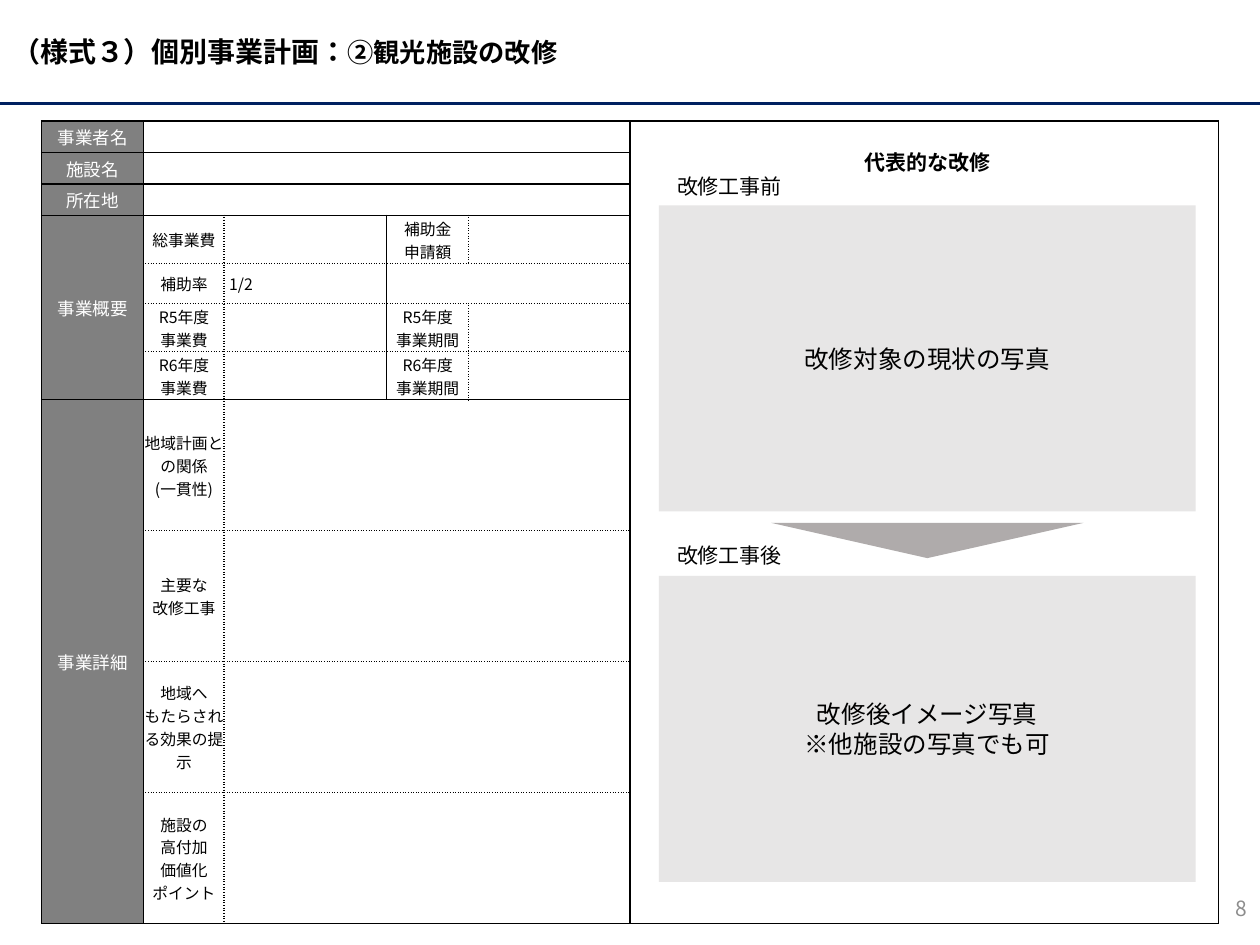
import pptx
import pptx.util
import pptx.dml.color
import pptx.enum.lang
import pptx.enum.shapes
import pptx.enum.text
import pptx.oxml
import pptx.oxml.ns

Inches = pptx.util.Inches
Pt = pptx.util.Pt
RGB = pptx.dml.color.RGBColor.from_string
Shape = pptx.enum.shapes.MSO_SHAPE
Align = pptx.enum.text.PP_ALIGN
qn = pptx.oxml.ns.qn

theme = {
    "font": "Noto Sans CJK JP",
    "black": "000000", "white": "FFFFFF", "navy": "002060",
    "head": "808080", "panel": "E7E6E6", "arrow": "AFABAB", "page": "8C8C8C",
    "title": 16, "topic": 15, "photo": 14, "label": 12, "group": 10, "cell": 9,
}


def write(frame, text, size="label", color="black", bold=False,
          align=Align.CENTER, join=False):
    frame.word_wrap = True
    frame.vertical_anchor = pptx.enum.text.MSO_ANCHOR.MIDDLE
    for i, line in enumerate(text.split("\n")):
        para = frame.paragraphs[-1] if join or i == 0 else frame.add_paragraph()
        para.alignment = align
        run = para.add_run()
        run.text = line
        run.font.size = Pt(theme[size])
        run.font.bold = bold
        run.font.name = theme["font"]
        run.font.language_id = pptx.enum.lang.MSO_LANGUAGE_ID.JAPANESE
        run.font.color.rgb = RGB(theme[color])
        east = pptx.oxml.parse_xml(
            f'<a:ea {pptx.oxml.ns.nsdecls("a")} typeface="{theme["font"]}"/>')
        run.font._element.find(qn("a:latin")).addnext(east)


def edge(cell, side, dash):
    cell._tc.get_or_add_tcPr().append(pptx.oxml.parse_xml(
        f'<a:ln{side} {pptx.oxml.ns.nsdecls("a")} w="12700"><a:solidFill>'
        f'<a:srgbClr val="{theme["black"]}"/></a:solidFill>'
        f'<a:prstDash val="{dash}"/></a:ln{side}>'))


deck = pptx.Presentation()
deck.slide_width, deck.slide_height = Inches(10), Inches(7.5)
slide = deck.slides.add_slide(deck.slide_layouts[6])
shapes = slide.shapes

rule = shapes.add_connector(pptx.enum.shapes.MSO_CONNECTOR.STRAIGHT,
                            0, Inches(0.82), Inches(10), Inches(0.82))
rule.line.color.rgb = RGB(theme["navy"])
rule.line.width = Pt(1.5)
rule._element.spPr.append(pptx.oxml.parse_xml(
    f'<a:effectLst {pptx.oxml.ns.nsdecls("a")}/>'))

title = shapes.add_textbox(0, 0, Inches(10), Inches(0.82)).text_frame
write(title, "（様式３）個別事業計画：", size="title", bold=True, align=Align.LEFT)
write(title, "②観光施設の改修", size="topic", bold=True, align=Align.LEFT, join=True)

cols = [0.81, 0.64, 1.29, 0.65, 1.28, 4.67]
rows = [0.25] * 3 + [0.38, 0.32, 0.38, 0.38] + [1.04] * 4
grid = shapes.add_table(len(rows), len(cols), Inches(0.33), Inches(0.96),
                        Inches(sum(cols)), Inches(sum(rows))).table
grid.first_row = grid.horz_banding = False
for col, width in zip(grid.columns, cols):
    col.width = Inches(width)
for row, height in zip(grid.rows, rows):
    row.height = Inches(height)

groups = {0: "事業者名", 1: "施設名", 2: "所在地", 3: "事業概要", 7: "事業詳細"}
labels = {
    (3, 1): "総事業費", (3, 3): "補助金\n申請額",
    (4, 1): "補助率", (4, 2): "1/2",
    (5, 1): "R5年度\n事業費", (5, 3): "R5年度\n事業期間",
    (6, 1): "R6年度\n事業費", (6, 3): "R6年度\n事業期間",
    (7, 1): "地域計画との関係\n(一貫性)",
    (8, 1): "主要な\n改修工事",
    (9, 1): "地域へ\nもたらされる効果の提示",
    (10, 1): "施設の\n高付加\n価値化\nポイント",
}
for r in range(len(rows)):
    for c in range(len(cols)):
        cell = grid.cell(r, c)
        cell.margin_top, cell.margin_bottom = Inches(0.01), 0
        inset = 0.04 if 3 <= r < 7 and c else 0
        cell.margin_left = cell.margin_right = Inches(inset)
        cell.vertical_anchor = pptx.enum.text.MSO_ANCHOR.MIDDLE
        body = r > 2 and 0 < c < 5
        dots = {
            "L": body and (c == 2 or c == 4 and r != 4),
            "R": body and (c == 1 or c == 3 and r != 4),
            "T": body and r not in (3, 7),
            "B": body and r not in (6, 10),
        }
        for side, dot in dots.items():
            edge(cell, side, "sysDot" if dot else "solid")
        if c in (0, 5):
            cell.fill.solid()
            cell.fill.fore_color.rgb = RGB(theme["white" if c else "head"])
        else:
            cell.fill.background()
        if c == 0 and r in groups:
            write(cell.text_frame, groups[r], size="group", color="white")
        elif (r, c) in labels:
            write(cell.text_frame, labels[r, c], size="cell",
                  align=Align.LEFT if c == 2 else Align.CENTER)
        else:
            cell.text_frame.paragraphs[0]._p.append(pptx.oxml.parse_xml(
                f'<a:endParaRPr {pptx.oxml.ns.nsdecls("a")} sz="{theme["cell"] * 100}"/>'))

spans = [(r, 1, r, 4) for r in range(3)] + [(r, 2, r, 4) for r in range(7, 11)]
spans += [(3, 0, 6, 0), (7, 0, 10, 0), (4, 3, 4, 4), (0, 5, 10, 5)]
for top, left, low, right in spans:
    grid.cell(top, left).merge(grid.cell(low, right))

texts = [
    ("8", 7.75, 7.01, 2.25, 0.4, {"color": "page", "align": Align.RIGHT}),
    ("改修工事前", 5.15, 1.36, 1.28, 0.23, {}),
    ("改修工事後", 5.15, 4.29, 1.28, 0.23, {}),
    ("代表的な改修", 5.23, 1.21, 4.26, 0.16, {"bold": True}),
]
for text, x, y, w, h, look in texts:
    box = shapes.add_textbox(Inches(x), Inches(y), Inches(w), Inches(h))
    write(box.text_frame, text, **look)

blocks = [
    (Shape.RECTANGLE, 5.23, 1.63, 4.26, 2.43, "panel", "改修対象の現状の写真"),
    (Shape.RECTANGLE, 5.23, 4.57, 4.26, 2.43, "panel",
     "改修後イメージ写真\n※他施設の写真でも可"),
    (Shape.ISOSCELES_TRIANGLE, 6.12, 4.15, 2.48, 0.28, "arrow", ""),
]
for kind, x, y, w, h, fill, text in blocks:
    block = shapes.add_shape(kind, Inches(x), Inches(y), Inches(w), Inches(h))
    block.shadow.inherit = False
    block.fill.solid()
    block.fill.fore_color.rgb = RGB(theme[fill])
    block.line.fill.background()
    if text:
        write(block.text_frame, text, size="photo")
    else:
        block._element.spPr.find(qn("a:xfrm")).set("flipV", "1")

deck.save("out.pptx")
